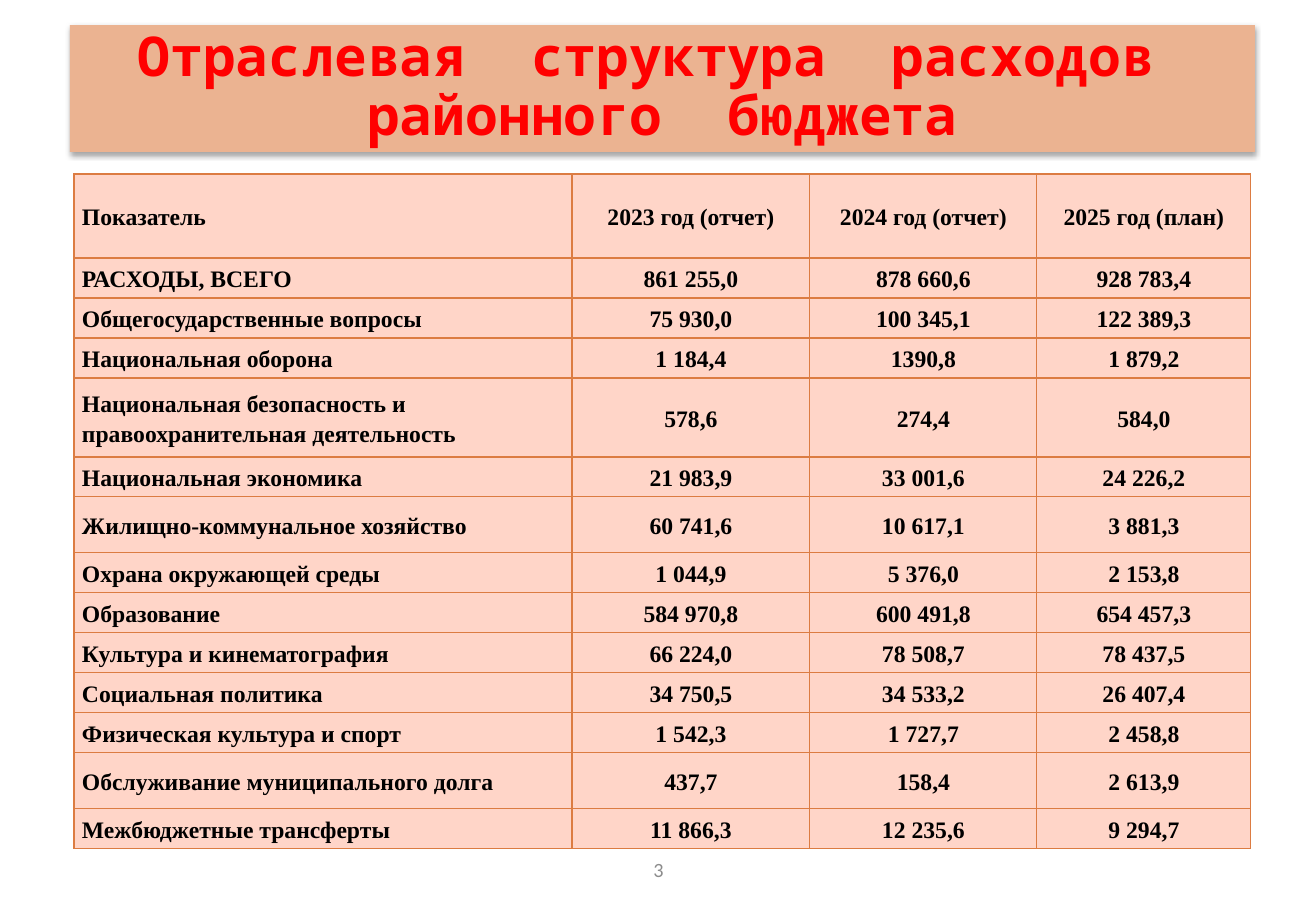
import pptx
import pptx.util
import pptx.oxml
import pptx.oxml.ns
import pptx.dml.color
import pptx.enum.text

PX = 914400 / 121.5
THEME = {
    "band": "EBB391", "title": "FF0000", "cell": "FFD5C8", "rule": "DC7C42",
    "text": "000000", "page": "8C8C8C",
    "title_size": 32.4, "cell_size": 14, "page_size": 12,
    "title_font": "Noto Sans Mono", "cell_font": "Times New Roman",
    "page_font": "Calibri",
}
COLS = [498, 238, 227, 214]
TALL = {0: 84, 4: 79, 6: 56, 12: 56}
ROWS = [
    ("Показатель", "2023 год (отчет)", "2024 год (отчет)", "2025 год (план)"),
    ("РАСХОДЫ, ВСЕГО", "861 255,0", "878 660,6", "928 783,4"),
    ("Общегосударственные вопросы", "75 930,0", "100 345,1", "122 389,3"),
    ("Национальная оборона", "1 184,4", "1390,8", "1 879,2"),
    ("Национальная безопасность и правоохранительная деятельность",
     "578,6", "274,4", "584,0"),
    ("Национальная экономика", "21 983,9", "33 001,6", "24 226,2"),
    ("Жилищно-коммунальное хозяйство", "60 741,6", "10 617,1", "3 881,3"),
    ("Охрана окружающей среды", "1 044,9", "5 376,0", "2 153,8"),
    ("Образование", "584 970,8", "600 491,8", "654 457,3"),
    ("Культура и кинематография", "66 224,0", "78 508,7", "78 437,5"),
    ("Социальная политика", "34 750,5", "34 533,2", "26 407,4"),
    ("Физическая культура и спорт", "1 542,3", "1 727,7", "2 458,8"),
    ("Обслуживание муниципального долга", "437,7", "158,4", "2 613,9"),
    ("Межбюджетные трансферты", "11 866,3", "12 235,6", "9 294,7"),
]
ALIGN = pptx.enum.text.PP_ALIGN
MIDDLE = pptx.enum.text.MSO_ANCHOR.MIDDLE
NS = pptx.oxml.ns.nsdecls("a")
RGB = pptx.dml.color.RGBColor.from_string


def px(n):
    return pptx.util.Emu(round(n * PX))


def write(frame, text, role, color, align=ALIGN.CENTER, bold=False,
          line=1.0, after=0):
    """Fill a text frame with one paragraph in the theme style of a role."""
    frame.word_wrap = True
    frame.vertical_anchor = MIDDLE
    para = frame.paragraphs[0]
    para.alignment = align
    para.line_spacing = line
    para.space_before = pptx.util.Pt(0)
    para.space_after = pptx.util.Pt(after)
    run = para.add_run()
    run.text = text
    run.font.name = THEME[role + "_font"]
    run.font.size = pptx.util.Pt(THEME[role + "_size"])
    run.font.bold = bold
    run.font.color.rgb = RGB(THEME[color])


deck = pptx.Presentation()
deck.slide_width, deck.slide_height = px(1316), px(911)
slide = deck.slides.add_slide(deck.slide_layouts[5])

# Title band with a soft shadow
title = slide.shapes.title
title.left, title.top, title.width, title.height = map(px, (70, 25, 1185, 127))
title.fill.solid()
title.fill.fore_color.rgb = RGB(THEME["band"])
title.text_frame.auto_size = pptx.enum.text.MSO_AUTO_SIZE.NONE
write(title.text_frame, "Отраслевая  структура  расходов  районного  бюджета",
      "title", "title", bold=True, line=0.9)
title._element.spPr.append(pptx.oxml.parse_xml(
    f'<a:effectLst {NS}><a:outerShdw blurRad="40000" dist="23000" dir="5400000" '
    'rotWithShape="0"><a:srgbClr val="000000"><a:alpha val="35000"/></a:srgbClr>'
    '</a:outerShdw></a:effectLst>'))

# Spending table
highs = [TALL.get(i, 40) for i in range(len(ROWS))]
table = slide.shapes.add_table(len(ROWS), len(COLS), px(74), px(174),
                               px(sum(COLS)), px(sum(highs))).table
for col, wide in zip(table.columns, COLS):
    col.width = px(wide)
for row, high, texts in zip(table.rows, highs, ROWS):
    row.height = px(high)
    for i, (cell, text) in enumerate(zip(row.cells, texts)):
        cell.fill.solid()
        cell.fill.fore_color.rgb = RGB(THEME["cell"])
        cell.margin_left = cell.margin_right = px(8)
        cell.margin_top = cell.margin_bottom = px(4)
        cell.vertical_anchor = MIDDLE
        write(cell.text_frame, text, "cell", "text", bold=True, line=1.15,
              after=10, align=ALIGN.CENTER if i else ALIGN.LEFT)
        props = cell._tc.get_or_add_tcPr()
        for at, side in enumerate("LRTB"):
            props.insert(at, pptx.oxml.parse_xml(
                f'<a:ln{side} {NS} w="9525"><a:solidFill><a:srgbClr '
                f'val="{THEME["rule"]}"/></a:solidFill></a:ln{side}>'))

# Page number
page = slide.shapes.add_textbox(px(450), px(845), px(417), px(49))
write(page.text_frame, "3", "page", "page")

deck.save("out.pptx")
